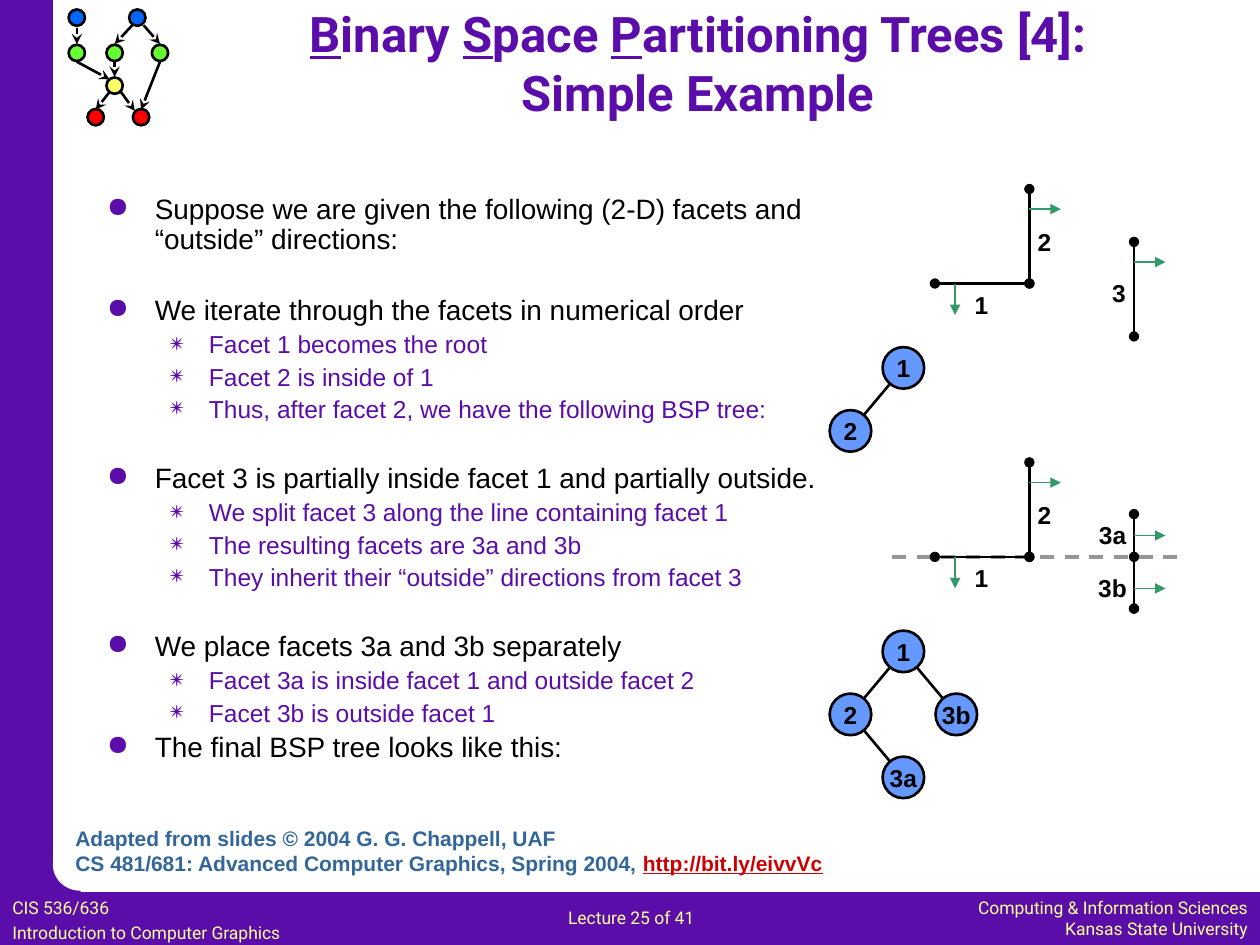
"""Builds the lecture slide on a simple BSP tree example."""
import pptx
import pptx.util
import pptx.dml.color
import pptx.enum.dml
import pptx.enum.shapes
import pptx.enum.text
import pptx.oxml
import pptx.oxml.ns

Inches, Pt = pptx.util.Inches, pptx.util.Pt
SHAPE = pptx.enum.shapes.MSO_SHAPE
ALIGN = pptx.enum.text.PP_ALIGN
ANCHOR = pptx.enum.text.MSO_ANCHOR

COLORS = {
    "purple": "5B0DAA", "white": "FFFFFF", "black": "000000", "cream": "FFFF99",
    "green": "66FF33", "blue": "0066FF", "yellow": "FFFF66", "red": "FF0000",
    "node": "6699FF", "outside": "339966", "dash": "969696",
    "credit": "336699", "link": "CC0000",
}
FRAME = [
    (SHAPE.RECTANGLE, (0, 7.08, 10, 0.42), "purple"),
    (SHAPE.RECTANGLE, (0, 0, 0.42, 7.5), "purple"),
    (SHAPE.RECTANGLE, (0.2, 6.85, 0.44, 0.44), "purple"),
    (SHAPE.OVAL, (0.42, 6.66, 0.44, 0.41), "white"),
]
FOOTERS = [
    ((0, 7.07, 2.95, 0.44), ALIGN.LEFT, 2,
     ["CIS 536/636", "Introduction to Computer Graphics"]),
    ((4.41, 7.15, 1.52, 0.27), ALIGN.LEFT, 0, ["Lecture 25 of 41"]),
    ((7.18, 7.07, 2.82, 0.43), ALIGN.RIGHT, 0,
     ["Computing & Information Sciences", "Kansas State University"]),
]
NETWORK_NODES = [
    (0.61, 0.42, "green"), (0.61, 0.14, "blue"), (0.91, 0.42, "green"),
    (1.09, 0.14, "blue"), (1.27, 0.42, "green"), (0.91, 0.68, "yellow"),
    (0.76, 0.93, "red"), (1.12, 0.93, "red"),
]
NETWORK_EDGES = [
    (0.61, 0.22, 0.61, 0.35), (1.05, 0.2, 0.91, 0.35), (1.14, 0.2, 1.27, 0.35),
    (0.61, 0.49, 0.87, 0.63), (0.91, 0.49, 0.91, 0.61), (1.27, 0.49, 1.12, 0.87),
    (0.96, 0.73, 1.07, 0.88), (0.87, 0.73, 0.76, 0.87),
]
TITLE = [
    [("B", True), ("inary ", False), ("S", True), ("pace ", False),
     ("P", True), ("artitioning Trees [4]:", False)],
    [("Simple Example", False)],
]
OUTLINE = [
    ("Suppose we are given the following (2-D) facets and\v“outside” directions:", []),
    ("We iterate through the facets in numerical order", [
        "Facet 1 becomes the root",
        "Facet 2 is inside of 1",
        "Thus, after facet 2, we have the following BSP tree:"]),
    ("Facet 3 is partially inside facet 1 and partially outside.", [
        "We split facet 3 along the line containing facet 1",
        "The resulting facets are 3a and 3b",
        "They inherit their “outside” directions from facet 3"]),
    ("We place facets 3a and 3b separately", [
        "Facet 3a is inside facet 1 and outside facet 2",
        "Facet 3b is outside facet 1"]),
    ("The final BSP tree looks like this:", []),
]
LEVELS = [
    {"bullet": "●", "left": 0.38, "hang": 0.38, "size": 16, "color": "black"},
    {"bullet": "✴", "left": 0.81, "hang": 0.31, "size": 14, "color": "purple"},
]
CREDIT = [
    [("Adapted from slides © 2004 G. G. Chappell, UAF", "credit", False)],
    [("CS 481/681: Advanced Computer Graphics, Spring 2004, ", "credit", False),
     ("http://bit.ly/eivvVc", "link", True)],
]
FACET_TOPS = [1.5, 3.67]
FACETS = [(0, 0.75, 0.75, 0.75), (0.75, 0, 0.75, 0.75)]
FACET_ARROWS = [(0.16, 0.75, 0.16, 1), (0.75, 0.16, 1, 0.16)]
FACET_LABELS = [("1", 0.37, 0.92), ("2", 0.87, 0.42)]
WHOLE_FACET = {
    "lines": [(9, 1.92, 9, 2.67)],
    "arrows": [(9, 2.08, 9.25, 2.08)],
    "labels": [("3", 8.88, 2.33)],
}
SPLIT_FACET = {
    "lines": [(9, 4.08, 9, 4.83), (9, 4.42, 9, 4.83)],
    "arrows": [(9, 4.25, 9.25, 4.25), (9, 4.67, 9.25, 4.67)],
    "labels": [("3a", 8.83, 4.25), ("3b", 8.83, 4.67)],
}
TREES = [
    (2.92, {"1": (0, 0), "2": (-1, 1)}, [("1", "2")]),
    (5.17, {"1": (0, 0), "2": (-1, 1), "3b": (1, 1), "3a": (0, 2)},
     [("1", "2"), ("1", "3b"), ("2", "3a")]),
]

deck = pptx.Presentation()
deck.slide_width, deck.slide_height = Inches(10), Inches(7.5)
page = deck.slides.add_slide(deck.slide_layouts[5])


def rgb(name):
    return pptx.dml.color.RGBColor.from_string(COLORS[name])


def style(target, color, **values):
    for name, value in values.items():
        setattr(target.font, name, value)
    target.font.color.rgb = rgb(color)


def add_line(ends, color="black", width=1.5, head=None, tail=None):
    line = page.shapes.add_connector(
        pptx.enum.shapes.MSO_CONNECTOR.STRAIGHT, *map(Inches, ends))
    line.line.color.rgb, line.line.width = rgb(color), Pt(width)
    stroke = line.line._get_or_add_ln()
    for tag, kind in (("a:headEnd", head), ("a:tailEnd", tail)):
        if kind:
            end = pptx.oxml.parse_xml(f"<{tag} {pptx.oxml.ns.nsdecls('a')}/>")
            end.set("type", kind)
            stroke.append(end)
    line._element.spPr.append(
        pptx.oxml.parse_xml(f"<a:effectLst {pptx.oxml.ns.nsdecls('a')}/>"))
    return line


def add_shape(kind, place, color, outlined=False):
    shape = page.shapes.add_shape(kind, *map(Inches, place))
    shape.shadow.inherit = False
    shape.fill.solid()
    shape.fill.fore_color.rgb = rgb(color)
    if outlined:
        shape.line.color.rgb, shape.line.width = rgb("black"), Pt(1.5)
    else:
        shape.line.fill.background()
    return shape


def add_circle(x, y, size, color):
    return add_shape(SHAPE.OVAL, (x - size / 2, y - size / 2, size, size), color, True)


def add_box(place):
    box = page.shapes.add_textbox(*map(Inches, place)).text_frame
    box.word_wrap = True
    return box


def next_para(box, index):
    return box.add_paragraph() if index else box.paragraphs[0]


def write_label(box, text):
    para = box.paragraphs[0]
    para.text, para.alignment = text, ALIGN.CENTER
    style(para, "black", name="Arial", size=Pt(14), bold=True)


def add_facets(lines, arrows, labels, left=0, top=0):
    for x1, y1, x2, y2 in lines:
        add_line((left + x1, top + y1, left + x2, top + y2), head="oval", tail="oval")
    for x1, y1, x2, y2 in arrows:
        add_line((left + x1, top + y1, left + x2, top + y2), "outside", 0.75, tail="triangle")
    for text, x, y in labels:
        write_label(add_box((left + x - 0.25, top + y - 0.17, 0.5, 0.33)), text)


def add_outline():
    box = add_box((0.75, 1.5, 8.69, 5.17))
    rows = []
    for index, (head, details) in enumerate(OUTLINE):
        gap = 0 if index == 0 else 3.2 if index == len(OUTLINE) - 1 else 23.5
        rows += [(head, 0, gap)] + [(detail, 1, 3.3) for detail in details]
    for index, (text, level, gap) in enumerate(rows):
        look = LEVELS[level]
        para = next_para(box, index)
        para.text, para.level = text, level
        para.line_spacing, para.space_before = 0.9, Pt(gap)
        props = para._p.get_or_add_pPr()
        props.set("marL", str(Inches(look["left"])))
        props.set("indent", str(-Inches(look["hang"])))
        for xml in (f'<a:buClr %s><a:srgbClr val="{COLORS["purple"]}"/></a:buClr>',
                    f'<a:buChar %s char="{look["bullet"]}"/>'):
            props.append(pptx.oxml.parse_xml(xml % pptx.oxml.ns.nsdecls("a")))
        style(para, look["color"], name="Arial", size=Pt(look["size"]))


for kind, place, color in FRAME:
    add_shape(kind, place, color)
for place, alignment, gap, lines in FOOTERS:
    box = add_box(place)
    for index, text in enumerate(lines):
        para = next_para(box, index)
        para.text, para.alignment, para.space_before = text, alignment, Pt(gap * index)
        style(para, "cream", name="Roboto", size=Pt(10))
for x, y, color in NETWORK_NODES:
    add_circle(x, y, 0.13, color)
for ends in NETWORK_EDGES:
    add_line(ends, tail="stealth")

title = page.shapes.title
for name, value in zip(("left", "top", "width", "height"), (1.25, 0.08, 8.58, 0.83)):
    setattr(title, name, Inches(value))
title.text_frame.auto_size = pptx.enum.text.MSO_AUTO_SIZE.NONE
title.text_frame.vertical_anchor = ANCHOR.MIDDLE
for index, pieces in enumerate(TITLE):
    para = next_para(title.text_frame, index)
    para.alignment = ALIGN.CENTER
    for text, underline in pieces:
        span = para.add_run()
        span.text = text
        style(span, "purple", name="Roboto", size=Pt(28), bold=True, underline=underline)

add_outline()
split_line = add_line((7.08, 4.42, 9.42, 4.42), "dash", 2)
split_line.line.dash_style = pptx.enum.dml.MSO_LINE.DASH
for top, third in zip(FACET_TOPS, (WHOLE_FACET, SPLIT_FACET)):
    add_facets(FACETS, FACET_ARROWS, FACET_LABELS, 7.42, top)
    add_facets(**third)
for top, nodes, edges in TREES:
    centers = {name: (7.17 + 0.42 * x, top + 0.5 * y) for name, (x, y) in nodes.items()}
    for parent, child in edges:
        add_line(centers[parent] + centers[child])
    for name, center in centers.items():
        frame = add_circle(*center, 0.33, "node").text_frame
        frame.word_wrap, frame.vertical_anchor = False, ANCHOR.MIDDLE
        write_label(frame, name)

credit = add_box((0.5, 6.5, 6.5, 0.5))
for index, pieces in enumerate(CREDIT):
    para = next_para(credit, index)
    for text, color, underline in pieces:
        span = para.add_run()
        span.text = text
        style(span, color, name="Arial", size=Pt(12), bold=True, underline=underline)

deck.save("out.pptx")
